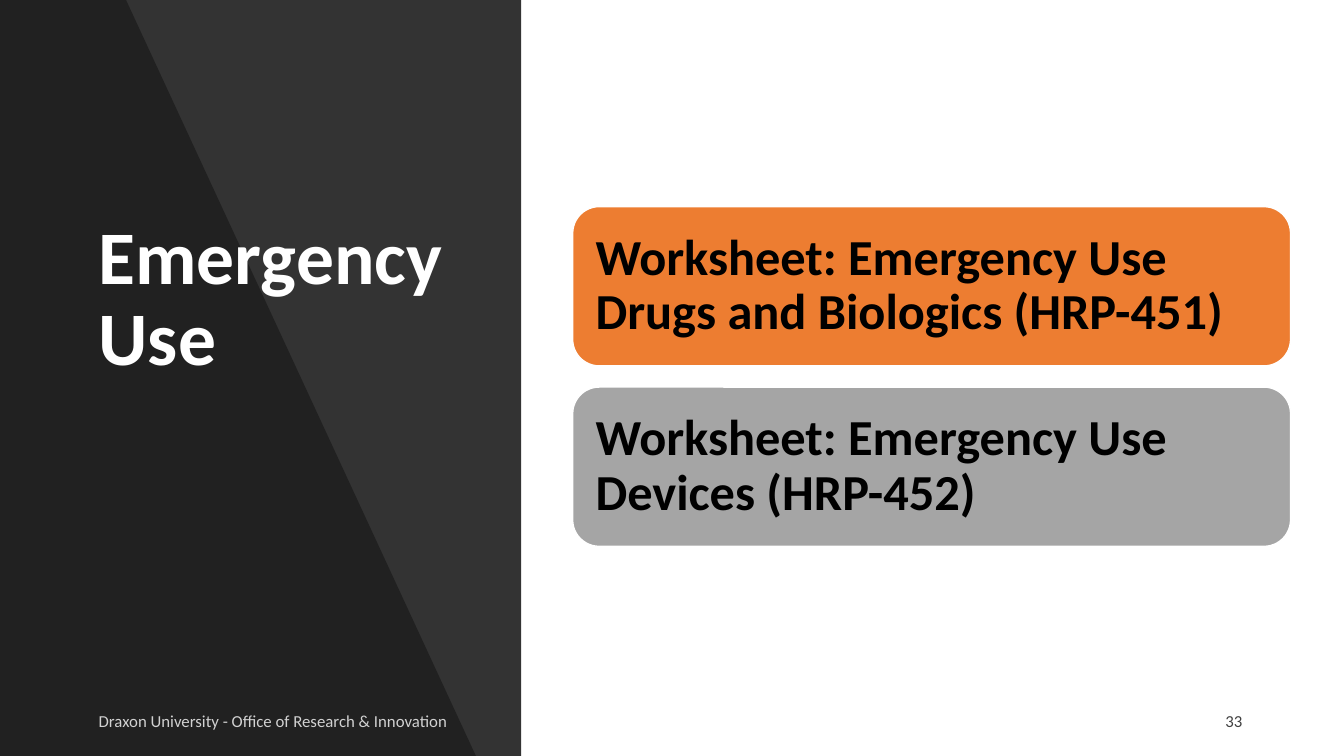
from dataclasses import dataclass

from lxml.etree import SubElement
from pptx import Presentation
from pptx.dml.color import RGBColor
from pptx.enum.shapes import MSO_SHAPE as Preset
from pptx.enum.text import MSO_ANCHOR as Anchor, PP_ALIGN as Align
from pptx.oxml.ns import qn
from pptx.util import Inches, Pt


@dataclass(frozen=True)
class Theme:
    font: str = "Calibri"
    black: str = "000000"
    white: str = "FFFFFF"
    orange: str = "ED7D31"
    gray: str = "A5A5A5"
    number: str = "404040"
    title_size: int = 54
    card_size: int = 36
    footer_size: int = 12


def paint(fill, color, opacity=100):
    fill.solid()
    fill.fore_color.rgb = RGBColor.from_string(color)
    if opacity < 100:
        for node in fill._xPr.iter(qn("a:srgbClr")):
            SubElement(node, qn("a:alpha"), val=str(opacity * 1000))


def write(frame, text, *, font, size, color, opacity=100, bold=False,
          align=Align.LEFT, anchor=Anchor.MIDDLE, spacing=1.0,
          inset_x=0.1, inset_y=0.05):
    frame.word_wrap = True
    frame.vertical_anchor = anchor
    frame.margin_left = frame.margin_right = Inches(inset_x)
    frame.margin_top = frame.margin_bottom = Inches(inset_y)
    para = frame.paragraphs[0]
    para.alignment = align
    para.line_spacing = spacing
    span = para.add_run()
    span.text = text
    span.font.name = font
    span.font.size = Pt(size)
    span.font.bold = bold
    paint(span.font.fill, color, opacity)


class SlideBuilder:
    def __init__(self, page, theme):
        self.page = page
        self.theme = theme

    def panel(self, left, top, width, height, color, opacity):
        box = self.page.shapes.add_shape(
            Preset.RECTANGLE, *map(Inches, (left, top, width, height)))
        box.shadow.inherit = False
        paint(box.fill, color, opacity)
        box.line.fill.background()

    def wedge(self, points, color, opacity):
        corners = [(Inches(x), Inches(y)) for x, y in points]
        outline = self.page.shapes.build_freeform(*corners[0])
        outline.add_line_segments(corners[1:], close=True)
        box = outline.convert_to_shape()
        box.shadow.inherit = False
        paint(box.fill, color, opacity)
        box.line.fill.background()

    def label(self, left, top, width, height, text, **style):
        box = self.page.shapes.add_textbox(
            *map(Inches, (left, top, width, height)))
        write(box.text_frame, text, font=self.theme.font, **style)

    def card(self, left, top, width, height, text, color):
        box = self.page.shapes.add_shape(
            Preset.ROUNDED_RECTANGLE, *map(Inches, (left, top, width, height)))
        box.shadow.inherit = False
        paint(box.fill, color)
        paint(box.line.fill, self.theme.white)
        box.line.width = Pt(1)
        write(box.text_frame, text, font=self.theme.font,
              size=self.theme.card_size, color=self.theme.black, bold=True,
              spacing=0.9, inset_x=0.15, inset_y=0.15)


def main():
    theme = Theme()
    deck = Presentation()
    deck.slide_width, deck.slide_height = Inches(13.33), Inches(7.5)
    page = deck.slides.add_slide(deck.slide_layouts[6])
    builder = SlideBuilder(page, theme)

    builder.panel(0, 0, 5.17, 7.5, theme.black, 80)
    builder.wedge([(0, 0), (1.25, 0), (4.72, 7.5), (0, 7.5)], theme.black, 35)
    builder.label(0.88, 1.23, 3.62, 2.61, "Emergency Use",
                  size=theme.title_size, color=theme.white, bold=True,
                  anchor=Anchor.BOTTOM, spacing=0.9)
    builder.label(0.88, 6.95, 3.68, 0.4,
                  "Draxon University - Office of Research & Innovation",
                  size=theme.footer_size, color=theme.white, opacity=80)
    builder.label(11.57, 6.95, 0.85, 0.4, "33", size=theme.footer_size,
                  color=theme.number, align=Align.RIGHT)

    worksheets = [
        ("Worksheet: Emergency Use Drugs and Biologics (HRP-451)", theme.orange),
        ("Worksheet: Emergency Use Devices (HRP-452)", theme.gray),
    ]
    card_top, card_pitch = 2.05, 1.79
    for index, (text, color) in enumerate(worksheets):
        builder.card(5.68, card_top + index * card_pitch, 7.12, 1.58, text, color)

    deck.save("out.pptx")


if __name__ == "__main__":
    main()
